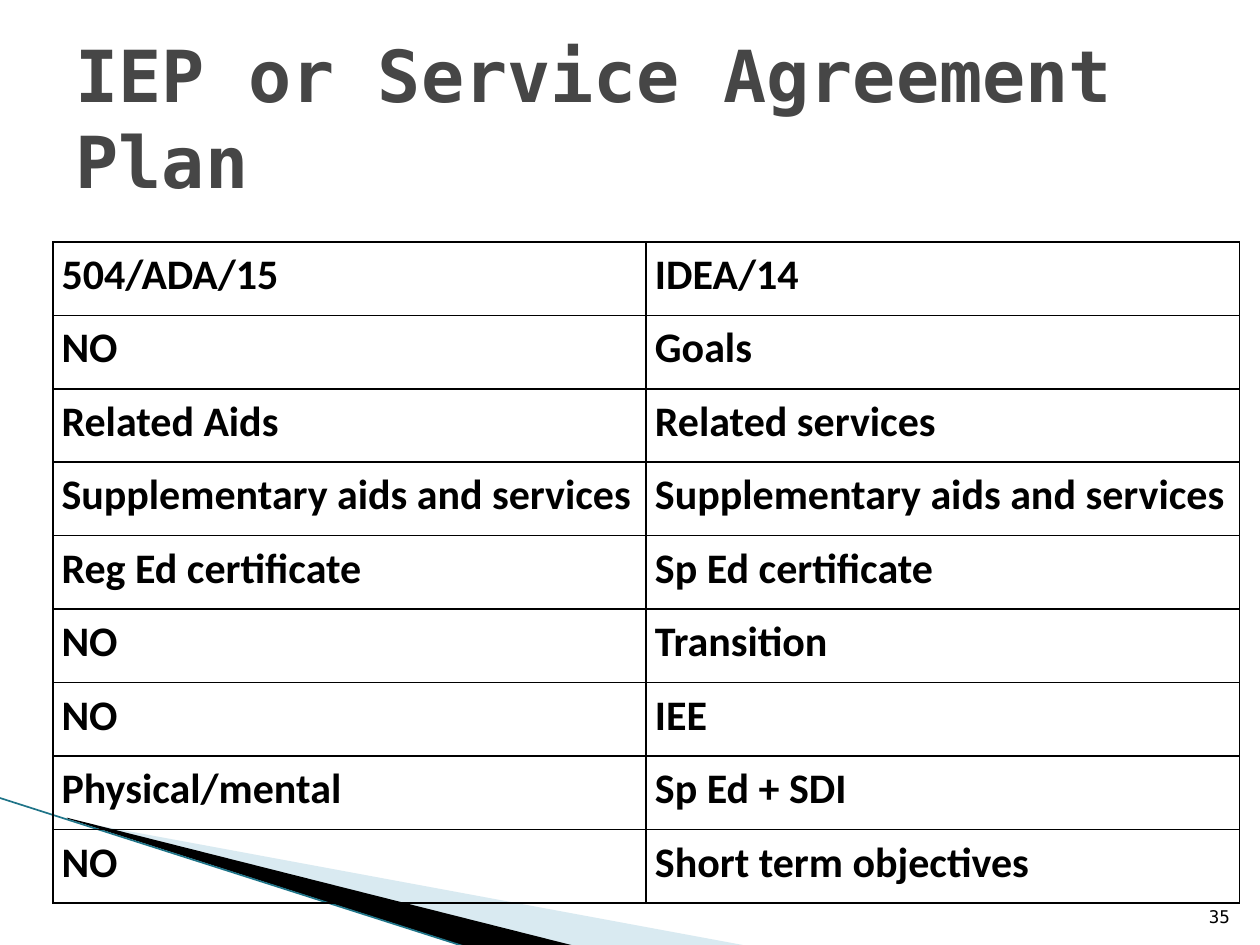
from lxml import etree
from pptx import Presentation
from pptx.dml.color import RGBColor
from pptx.enum import shapes, text
from pptx.oxml import ns
from pptx.util import Pt

COLORS = {
    "black": "000000",
    "title": "464646",
    "pale wedge": "A0CBDC",
    "edge": "1F7488",
}
ROWS = [
    ("504/ADA/15", "IDEA/14"),
    ("NO", "Goals"),
    ("Related Aids", "Related services"),
    ("Supplementary aids and services", "Supplementary aids and services"),
    ("Reg Ed certificate", "Sp Ed certificate"),
    ("NO", "Transition"),
    ("NO", "IEE"),
    ("Physical/mental", "Sp Ed + SDI"),
    ("NO", "Short term objectives"),
]
WEDGES = [
    ("pale wedge", 40, [(39.6, 468.7), (428.4, 540.7), (328.3, 540.7), (39.6, 468)]),
    ("black", 100, [(38.2, 467.3), (329, 540.7), (267.8, 541.4), (38.9, 468)]),
]


def write(frame, words, size, font="DejaVu Sans Mono", color="black", bold=False,
          align=text.PP_ALIGN.LEFT, spacing=1.0):
    paragraph = frame.paragraphs[0]
    paragraph.alignment = align
    paragraph.line_spacing = spacing
    run = paragraph.add_run()
    run.text = words
    run.font.size = Pt(size)
    run.font.name = font
    run.font.bold = bold
    run.font.color.rgb = RGBColor.from_string(COLORS[color])


presentation = Presentation()
presentation.slide_width, presentation.slide_height = Pt(720), Pt(540)
slide = presentation.slides.add_slide(presentation.slide_layouts[5])

# Corner decoration
for color, opacity, points in WEDGES:
    corners = [(Pt(x), Pt(y)) for x, y in points]
    builder = slide.shapes.build_freeform(*corners[0])
    builder.add_line_segments(corners[1:], close=True)
    wedge = builder.convert_to_shape()
    wedge.shadow.inherit = False
    wedge.line.fill.background()
    wedge.fill.solid()
    wedge.fill.fore_color.rgb = RGBColor.from_string(COLORS[color])
    if opacity < 100:
        fill_color = wedge.fill._xPr.find(".//" + ns.qn("a:srgbClr"))
        etree.SubElement(fill_color, ns.qn("a:alpha"), val=str(opacity * 1000))

edge = slide.shapes.add_connector(
    shapes.MSO_CONNECTOR.STRAIGHT, Pt(-0.7), Pt(455.8), Pt(267.1), Pt(541.4))
edge.line.color.rgb = RGBColor.from_string(COLORS["edge"])
edge.line.width = Pt(0.95)
etree.SubElement(edge._element.spPr, ns.qn("a:effectLst"))

# Title and page number
title = slide.shapes.title
title.left, title.top, title.width, title.height = Pt(36), Pt(21.6), Pt(648), Pt(90)
title.text_frame.vertical_anchor = text.MSO_ANCHOR.MIDDLE
title.text_frame.auto_size = text.MSO_AUTO_SIZE.NONE
write(title.text_frame, "IEP or Service Agreement Plan", 41, color="title", bold=True)

number = slide.shapes.add_textbox(Pt(681.1), Pt(504.7), Pt(28.8), Pt(28.8)).text_frame
number.word_wrap = True
number.vertical_anchor = text.MSO_ANCHOR.BOTTOM
write(number, "35", 10, align=text.PP_ALIGN.RIGHT)

# Comparison table
table = slide.shapes.add_table(
    len(ROWS), 2, Pt(30.2), Pt(138.2), Pt(678.2), Pt(378)).table
table.first_row = table.horz_banding = False
for row, words in zip(table.rows, ROWS):
    row.height = Pt(42)
    for cell, label in zip(row.cells, words):
        cell.margin_left = cell.margin_right = Pt(5)
        cell.margin_top = cell.margin_bottom = 0
        write(cell.text_frame, label, 24, font="Calibri", bold=True, spacing=1.15)
        properties = cell._tc.get_or_add_tcPr()
        for side in "LRTB":
            border = etree.SubElement(properties, ns.qn("a:ln" + side), w=str(Pt(1)))
            fill = etree.SubElement(border, ns.qn("a:solidFill"))
            etree.SubElement(fill, ns.qn("a:srgbClr"), val=COLORS["black"])
        cell.fill.background()

presentation.save("out.pptx")
